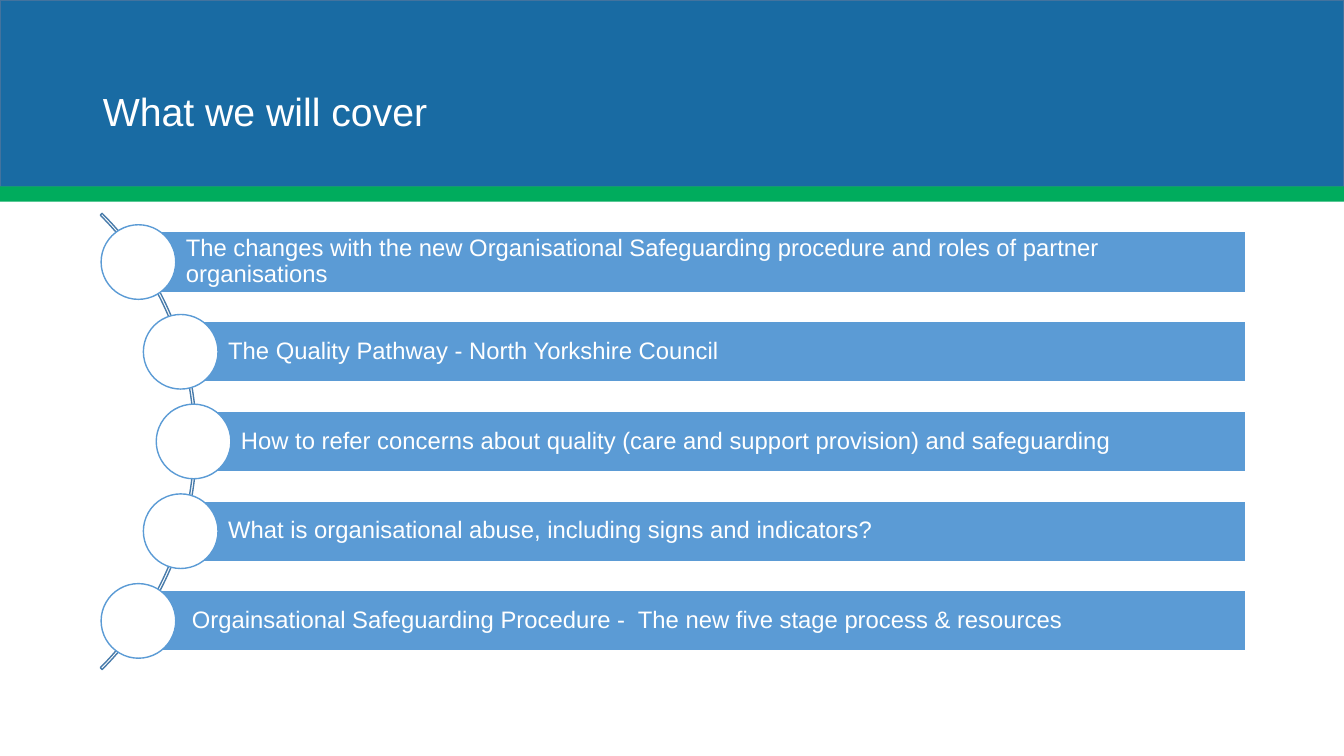
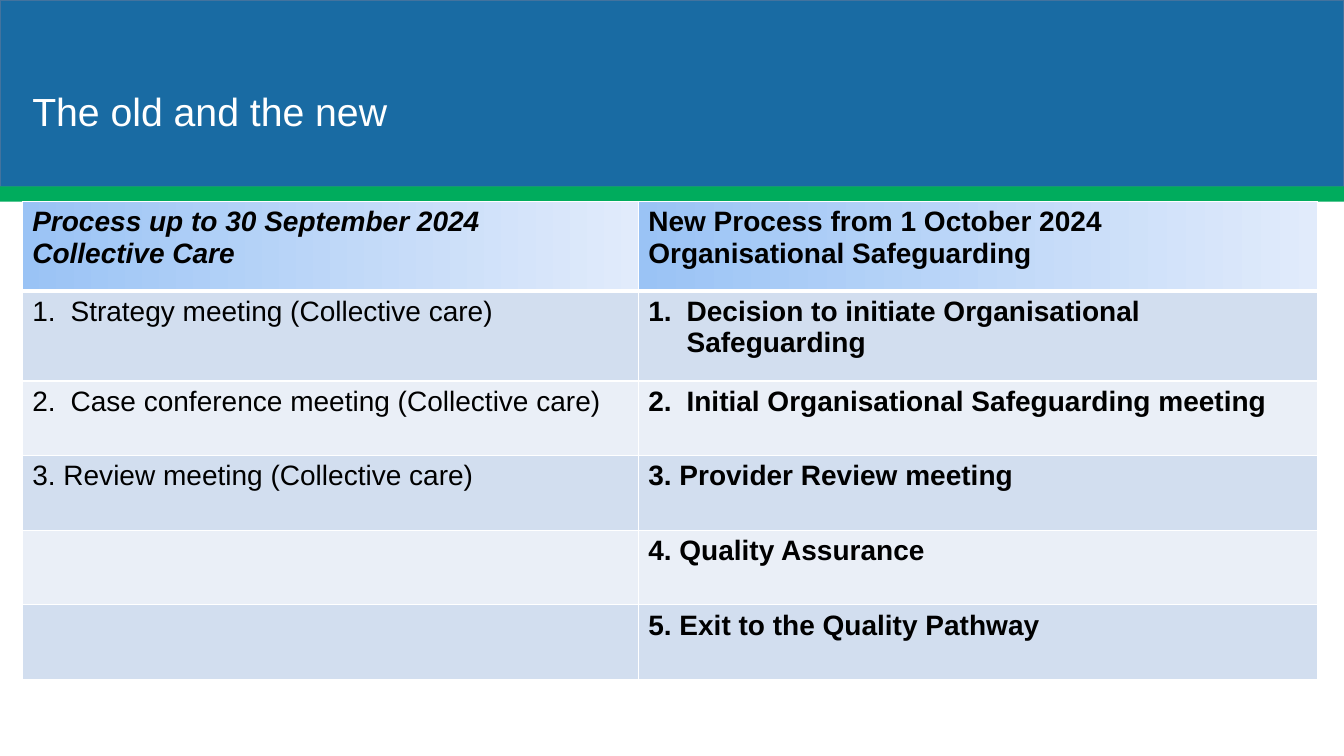
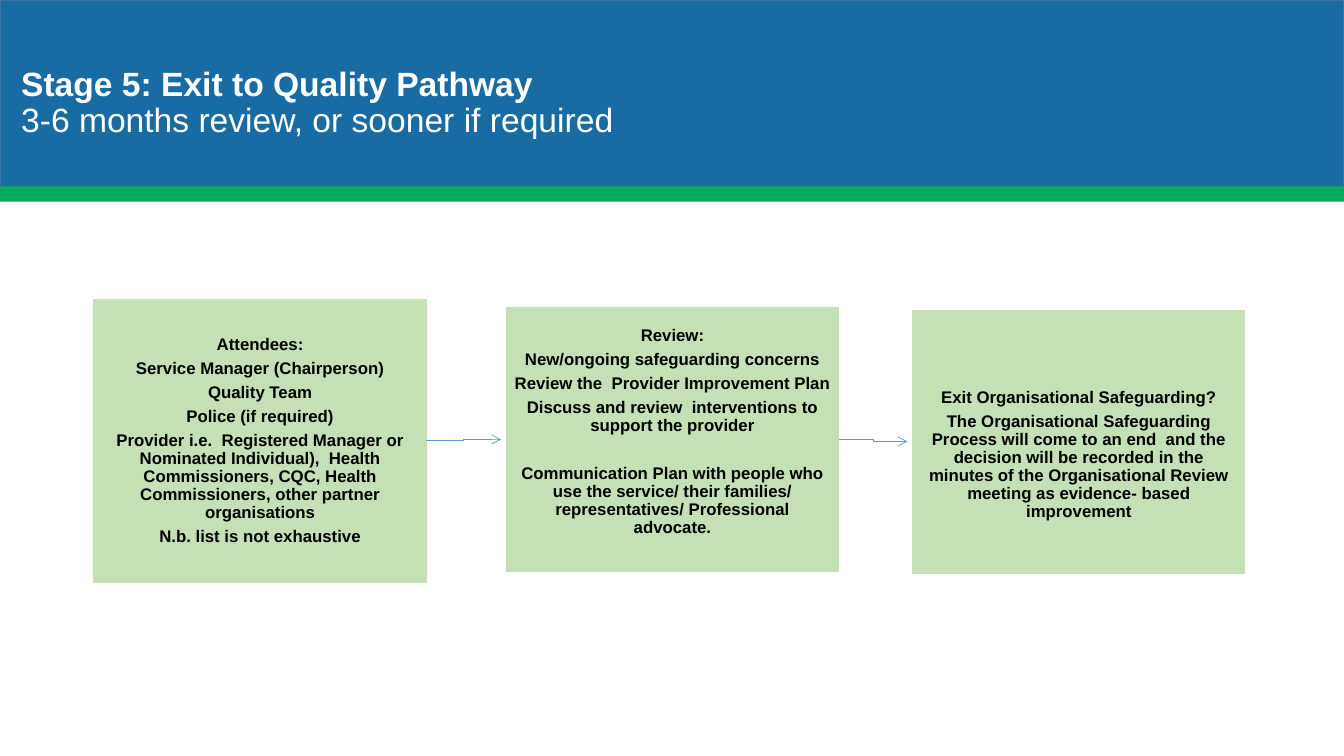
import math

from lxml import etree
from pptx import Presentation
from pptx.dml.color import RGBColor
from pptx.enum import shapes, text
from pptx.oxml import ns
from pptx.util import Inches, Pt

WHITE, BLACK = "FFFFFF", "000000"
BAND, BAND_EDGE, STRIPE = "196BA3", "43739E", "00AC5D"
BLUE, ARC, GREEN = "5B9BD5", "497CAB", "C5E0B4"
HEADER_FADE = ("9AC3F5", "E1EBFB")
ROW_FILLS = ("D2DEEF", "EAEFF7")
MIDDLE = text.MSO_ANCHOR.MIDDLE
LEFT, CENTER = text.PP_ALIGN.LEFT, text.PP_ALIGN.CENTER
RECT, OVAL = shapes.MSO_SHAPE.RECTANGLE, shapes.MSO_SHAPE.OVAL


def rgb(color):
    return RGBColor.from_string(color)


def add_xml(parent, tag, index=None, **attrs):
    el = etree.Element(ns.qn(tag), attrs)
    parent.insert(len(parent) if index is None else index, el)
    return el


def put_text(tf, paras, **fmt):
    """Fill a frame; a paragraph is a string or (string, overrides)."""
    for i, para in enumerate(paras):
        words, own = (para, {}) if isinstance(para, str) else para
        f = {"size": 12, "color": BLACK, "bold": False, "italic": False,
             "align": LEFT, "line": 1.0, "before": 0, "after": 0,
             "number": None, **fmt, **own}
        p = tf.paragraphs[0] if i == 0 else tf.add_paragraph()
        p.alignment, p.line_spacing = f["align"], f["line"]
        p.space_before, p.space_after = Pt(f["before"]), Pt(f["after"])
        if f["number"]:
            p_pr = p._p.get_or_add_pPr()
            p_pr.set("marL", str(Inches(0.38)))
            p_pr.set("indent", str(-Inches(0.38)))
            add_xml(p_pr, "a:buFont", typeface="+mj-lt")
            add_xml(p_pr, "a:buAutoNum", type="arabicPeriod",
                    startAt=str(f["number"]))
        r = p.add_run()
        r.text = words
        r.font.name, r.font.size = "Arial", Pt(f["size"])
        r.font.bold, r.font.italic = f["bold"], f["italic"]
        r.font.color.rgb = rgb(f["color"])


def set_frame(tf, insets):
    tf.word_wrap, tf.vertical_anchor = True, MIDDLE
    tf.margin_left, tf.margin_top, tf.margin_right, tf.margin_bottom = map(
        Inches, insets)


def add_box(s, kind, box, fill=None, line=None):
    sp = s.shapes.add_shape(kind, *map(Inches, box))
    sp.shadow.inherit = False
    if fill:
        sp.fill.solid()
        sp.fill.fore_color.rgb = rgb(fill)
    else:
        sp.fill.background()
    if line:
        sp.line.color.rgb = rgb(line)
        sp.line.width = Pt(1)
    else:
        sp.line.fill.background()
    return sp


def add_master_bands(prs, s):
    """Draw the header bands and move them behind everything on the master."""
    bands = [add_box(s, RECT, (0, 0, 13.33, 1.85), BAND, BAND_EDGE),
             add_box(s, RECT, (0, 1.85, 13.33, 0.15), STRIPE)]
    tree = prs.slide_master.element.cSld.spTree
    for i, band in enumerate(bands):
        tree.insert(2 + i, band.element)


def add_slide(prs, title, box, size=28):
    s = prs.slides.add_slide(prs.slide_layouts[5])
    sp = s.shapes.title
    sp.left, sp.top, sp.width, sp.height = map(Inches, box)
    sp.text_frame.auto_size = text.MSO_AUTO_SIZE.NONE
    set_frame(sp.text_frame, (0.1, 0.05, 0.1, 0.05))
    put_text(sp.text_frame, title, size=size, color=WHITE, line=0.9)
    return s


# Agenda: bars whose circles sit on a curve
def add_agenda(s, items, center_x, center_y, right):
    radius, orbit, pitch = 3.2, 3.17, 0.89
    bar_h, dot = 0.6, 0.74
    arc = add_box(s, shapes.MSO_SHAPE.BLOCK_ARC,
                  (center_x - radius, center_y - radius, 2 * radius, 2 * radius),
                  line=ARC)
    for i, value in enumerate((189, 27, 0.004)):
        arc.adjustments[i] = value
    for i, (words, inset) in enumerate(items):
        dy = (i - (len(items) - 1) / 2) * pitch
        x = center_x + math.sqrt(orbit ** 2 - dy ** 2)
        y = center_y + dy
        bar = add_box(s, RECT, (x, y - bar_h / 2, right - x, bar_h), BLUE, WHITE)
        set_frame(bar.text_frame, (inset, 0.05, 0.05, 0.05))
        put_text(bar.text_frame, [words], size=17, color=WHITE, line=0.9)
        add_box(s, OVAL, (x - dot / 2, y - dot / 2, dot, dot), WHITE, BLUE)


# Comparison table
def set_borders(cell, top=1, bottom=1):
    tc_pr = cell._tc.get_or_add_tcPr()
    widths = {"a:lnL": 1, "a:lnR": 1, "a:lnT": top, "a:lnB": bottom}
    for i, (tag, width) in enumerate(widths.items()):
        ln = add_xml(tc_pr, tag, i, w=str(Pt(width)))
        add_xml(add_xml(ln, "a:solidFill"), "a:srgbClr", val=WHITE)


def fill_cell(cell, row):
    if row:
        cell.fill.solid()
        cell.fill.fore_color.rgb = rgb(ROW_FILLS[(row - 1) % 2])
        return
    cell.fill.gradient()
    cell.fill.gradient_angle = 0
    for stop, color in zip(cell.fill.gradient_stops, HEADER_FADE):
        stop.color.rgb = rgb(color)


def add_comparison(s, rows, left, top, widths, heights):
    table = s.shapes.add_table(
        len(rows), len(widths), Inches(left), Inches(top),
        Inches(sum(widths)), Inches(sum(heights))).table
    for col, width in zip(table.columns, widths):
        col.width = Inches(width)
    for i, (row, height) in enumerate(zip(rows, heights)):
        table.rows[i].height = Inches(height)
        for j, paras in enumerate(row):
            cell = table.cell(i, j)
            fill_cell(cell, i)
            set_borders(cell, top=3 if i == 1 else 1, bottom=3 if i == 0 else 1)
            put_text(cell.text_frame, paras, size=20,
                     bold=i == 0 or j == 1, italic=i == j == 0)


# Process: boxes joined by arrows
def add_step(s, box, paras, top=0.09, bottom=0.09):
    sp = add_box(s, RECT, box, GREEN, WHITE)
    set_frame(sp.text_frame, (0.09, top, 0.09, bottom))
    put_text(sp.text_frame, paras, bold=True, align=CENTER, line=0.9, after=4.2)


def add_arrow(s, x1, y1, x2, y2):
    c = s.shapes.add_connector(shapes.MSO_CONNECTOR.ELBOW,
                               *map(Inches, (x1, y1, x2, y2)))
    c.line.color.rgb = rgb(BLUE)
    c.line.width = Pt(0.5)
    add_xml(c.line._get_or_add_ln(), "a:tailEnd", type="arrow")
    add_xml(c._element.spPr, "a:effectLst")


def main():
    prs = Presentation()
    prs.slide_width, prs.slide_height = Inches(13.33), Inches(7.5)

    # What we will cover
    s = add_slide(prs, ["What we will cover"], (0.92, 0.4, 10.98, 1.45))
    add_master_bands(prs, s)
    add_agenda(s, [
        ("The changes with the new Organisational Safeguarding procedure "
         "and roles of partner organisations", 0.47),
        ("The Quality Pathway - North Yorkshire Council", 0.47),
        ("How to refer concerns about quality (care and support provision) "
         "and safeguarding", 0.47),
        ("What is organisational abuse, including signs and indicators?", 0.47),
        ("Orgainsational Safeguarding Procedure -  The new five stage process "
         "& resources", 0.53),
    ], center_x=-1.25, center_y=4.38, right=12.36)

    # The old and the new
    s = add_slide(prs, ["The old and the new"], (0.22, 0.4, 11.68, 1.45))
    first, second = {"number": 1}, {"number": 2}
    add_comparison(s, [
        (["Process up to 30 September 2024", "Collective Care"],
         ["New Process from 1 October 2024", "Organisational Safeguarding"]),
        ([("Strategy meeting (Collective care)", first)],
         [("Decision to initiate Organisational Safeguarding", first)]),
        ([("Case conference meeting (Collective care)", second)],
         [("Initial Organisational Safeguarding meeting", second)]),
        (["3. Review meeting (Collective care)"], ["3. Provider Review meeting"]),
        ([], ["4. Quality Assurance"]),
        ([], ["5. Exit to the Quality Pathway"]),
    ], 0.22, 2, (6.11, 6.74), [0.89] * 2 + [0.74] * 4)

    # Stage 5
    s = add_slide(prs, [("Stage 5: Exit to Quality Pathway", {"bold": True}),
                        "3-6 months review, or sooner if required"],
                  (0.11, 0.19, 11.79, 1.68), size=24)
    add_step(s, (0.92, 2.96, 3.32, 2.83), [
        "Attendees:", "Service Manager (Chairperson)", "Quality Team",
        "Police (if required)",
        "Provider i.e.  Registered Manager or Nominated Individual),  Health "
        "Commissioners, CQC, Health Commissioners, other partner organisations",
        "N.b. list is not exhaustive"])
    add_step(s, (5.01, 3.04, 3.32, 2.64), [
        "Review:", "New/ongoing safeguarding concerns",
        "Review the  Provider Improvement Plan",
        "Discuss and review  interventions to support the provider",
        ("Communication Plan with people who use the service/ their families/ "
         "representatives/ Professional advocate.", {"before": 17})],
        bottom=0.24)
    add_step(s, (9.04, 3.07, 3.32, 2.63), [
        "Exit Organisational Safeguarding?",
        "The Organisational Safeguarding Process will come to an end  and the "
        "decision will be recorded in the minutes of the Organisational Review "
        "meeting as evidence- based improvement"], top=0.35)
    add_arrow(s, 4.23, 4.37, 4.97, 4.36)
    add_arrow(s, 8.32, 4.36, 9, 4.38)

    prs.save("out.pptx")


if __name__ == "__main__":
    main()
